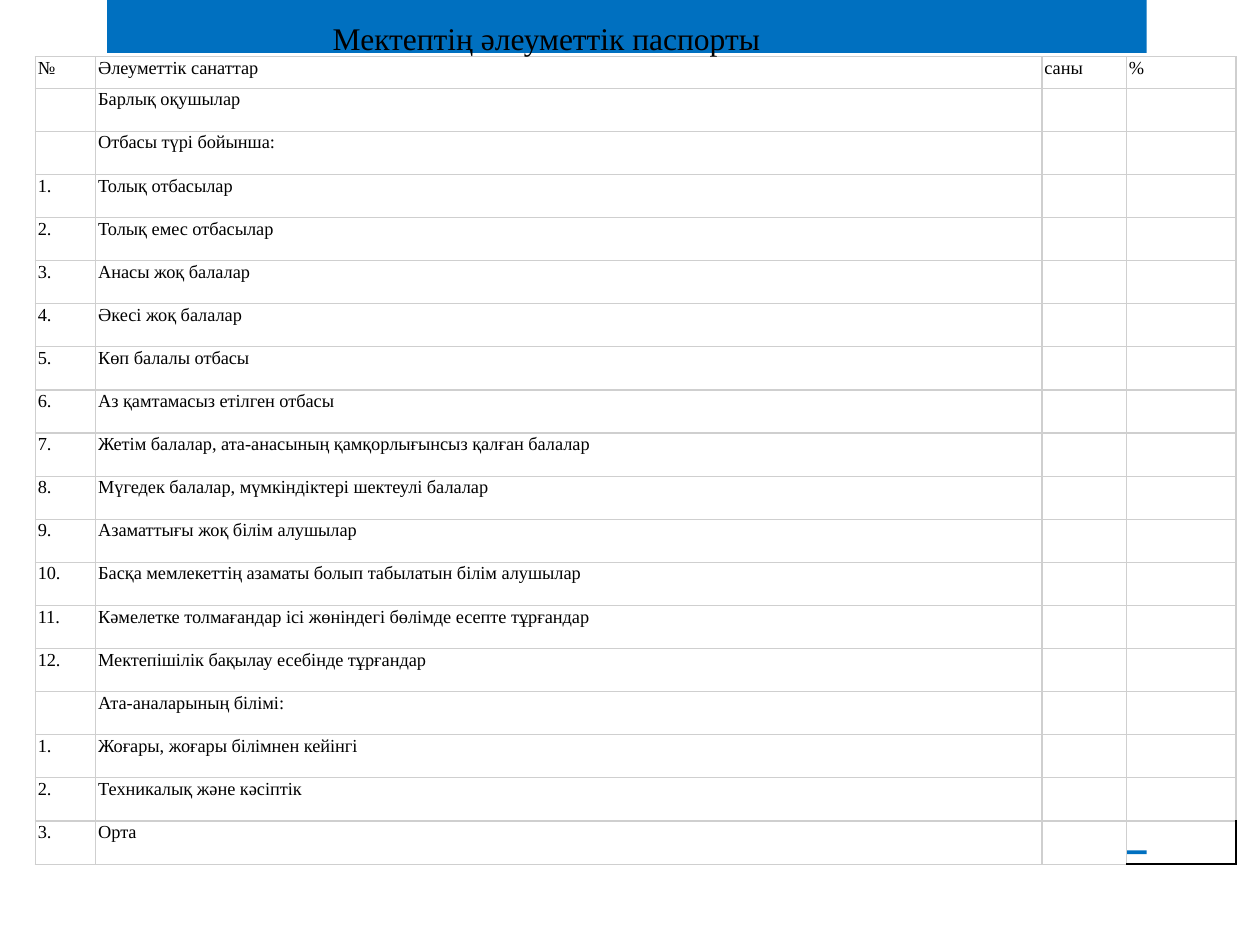
from dataclasses import dataclass

from pptx import Presentation
from pptx.dml.color import RGBColor as RGB
from pptx.enum.shapes import MSO_SHAPE as SHAPE
from pptx.enum.text import MSO_ANCHOR as ANCHOR
from pptx.oxml import parse_xml
from pptx.oxml.ns import nsdecls
from pptx.util import Inches, Pt


@dataclass(frozen=True)
class Theme:
    """Colours, font and type sizes of the slide."""
    blue: str = "0070C0"
    ink: str = "000000"
    paper: str = "FFFFFF"
    grid: str = "CFCFCF"
    font: str = "Times New Roman"
    title: float = 18
    body: float = 10.5


THEME = Theme()
COLUMNS = (0.48, 7.51, 0.67, 0.87)
HEADER_HEIGHT = 0.25
HEADER = ("№", "Әлеуметтік санаттар", "саны", "%")
FAMILY_TYPES = (
    "Толық отбасылар",
    "Толық емес отбасылар",
    "Анасы жоқ балалар",
    "Әкесі жоқ балалар",
    "Көп балалы отбасы",
    "Аз қамтамасыз етілген отбасы",
    "Жетім балалар, ата-анасының қамқорлығынсыз қалған балалар",
    "Мүгедек балалар, мүмкіндіктері шектеулі балалар",
    "Азаматтығы жоқ білім алушылар",
    "Басқа мемлекеттің азаматы болып табылатын білім алушылар",
    "Кәмелетке толмағандар ісі жөніндегі бөлімде есепте тұрғандар",
    "Мектепішілік бақылау есебінде тұрғандар",
)
EDUCATION_LEVELS = (
    "Жоғары, жоғары білімнен кейінгі",
    "Техникалық және кәсіптік",
    "Орта",
)


def numbered(categories):
    """Return table rows numbered from one."""
    return [(f"{number}.", category, "", "")
            for number, category in enumerate(categories, 1)]


def style_text(paragraph, size):
    """Give the runs of a paragraph the slide's font."""
    for run in paragraph.runs:
        run.font.name = THEME.font
        run.font.size = Pt(size)
        run.font.color.rgb = RGB.from_string(THEME.ink)


def add_bar(slide, left, top, width, height):
    """Place a plain blue bar."""
    bar = slide.shapes.add_shape(
        SHAPE.RECTANGLE, Inches(left), Inches(top), Inches(width), Inches(height))
    bar.shadow.inherit = False
    bar.fill.solid()
    bar.fill.fore_color.rgb = RGB.from_string(THEME.blue)
    bar.line.fill.background()


def add_title(slide, left, top, width, height):
    """Place the slide title."""
    title = slide.shapes.add_textbox(
        Inches(left), Inches(top), Inches(width), Inches(height))
    frame = title.text_frame
    frame.word_wrap = False
    frame.vertical_anchor = ANCHOR.TOP
    frame.text = " Мектептің әлеуметтік паспорты"
    style_text(frame.paragraphs[0], THEME.title)


def set_borders(cell, outer, outer_width):
    """Draw grid lines left and top, and the outer line right and bottom."""
    sides = (("L", THEME.grid, 0.75), ("R", outer, outer_width),
             ("T", THEME.grid, 0.75), ("B", outer, outer_width))
    properties = cell._tc.get_or_add_tcPr()
    for position, (side, color, width) in enumerate(sides):
        properties.insert(position, parse_xml(
            f'<a:ln{side} {nsdecls("a")} w="{Pt(width)}"><a:solidFill>'
            f'<a:srgbClr val="{color}"/></a:solidFill></a:ln{side}>'))


def add_passport_table(slide, left, top, height):
    """Place the table of social categories."""
    rows = [HEADER, ("", "Барлық оқушылар", "", ""),
            ("", "Отбасы түрі бойынша:", "", ""), *numbered(FAMILY_TYPES),
            ("", "Ата-аналарының білімі:", "", ""), *numbered(EDUCATION_LEVELS)]
    table = slide.shapes.add_table(
        len(rows), len(COLUMNS), Inches(left), Inches(top),
        Inches(sum(COLUMNS)), Inches(height)).table
    table.first_row = table.horz_banding = False
    for column, width in zip(table.columns, COLUMNS):
        column.width = Inches(width)
    for row in table.rows:
        row.height = Inches((height - HEADER_HEIGHT) / (len(rows) - 1))
    table.rows[0].height = Inches(HEADER_HEIGHT)

    last_row, last_column = len(rows) - 1, len(COLUMNS) - 1
    for r, texts in enumerate(rows):
        for c, text in enumerate(texts):
            cell = table.cell(r, c)
            cell.margin_left = cell.margin_right = Inches(0.02)
            cell.margin_top = cell.margin_bottom = Inches(0.01)
            if text:
                cell.text_frame.text = text
                style_text(cell.text_frame.paragraphs[0], THEME.body)
            if r == last_row and c < last_column:
                cell.fill.solid()
                cell.fill.fore_color.rgb = RGB.from_string(THEME.paper)
            else:
                cell.fill.background()
            if (r, c) == (last_row, last_column):
                set_borders(cell, THEME.ink, 1)
            else:
                set_borders(cell, THEME.grid, 0.75)


def main():
    """Build and save the slide."""
    deck = Presentation()
    deck.slide_width, deck.slide_height = Inches(10), Inches(7.5)
    slide = deck.slides.add_slide(deck.slide_layouts[6])
    add_bar(slide, 0.85, 0, 8.25, 0.42)
    add_bar(slide, 0.85, 6.75, 8.25, 0.03)
    add_passport_table(slide, 0.28, 0.45, 6.41)
    add_title(slide, 2.48, 0.1, 3.69, 0.71)
    deck.save("out.pptx")


if __name__ == "__main__":
    main()
